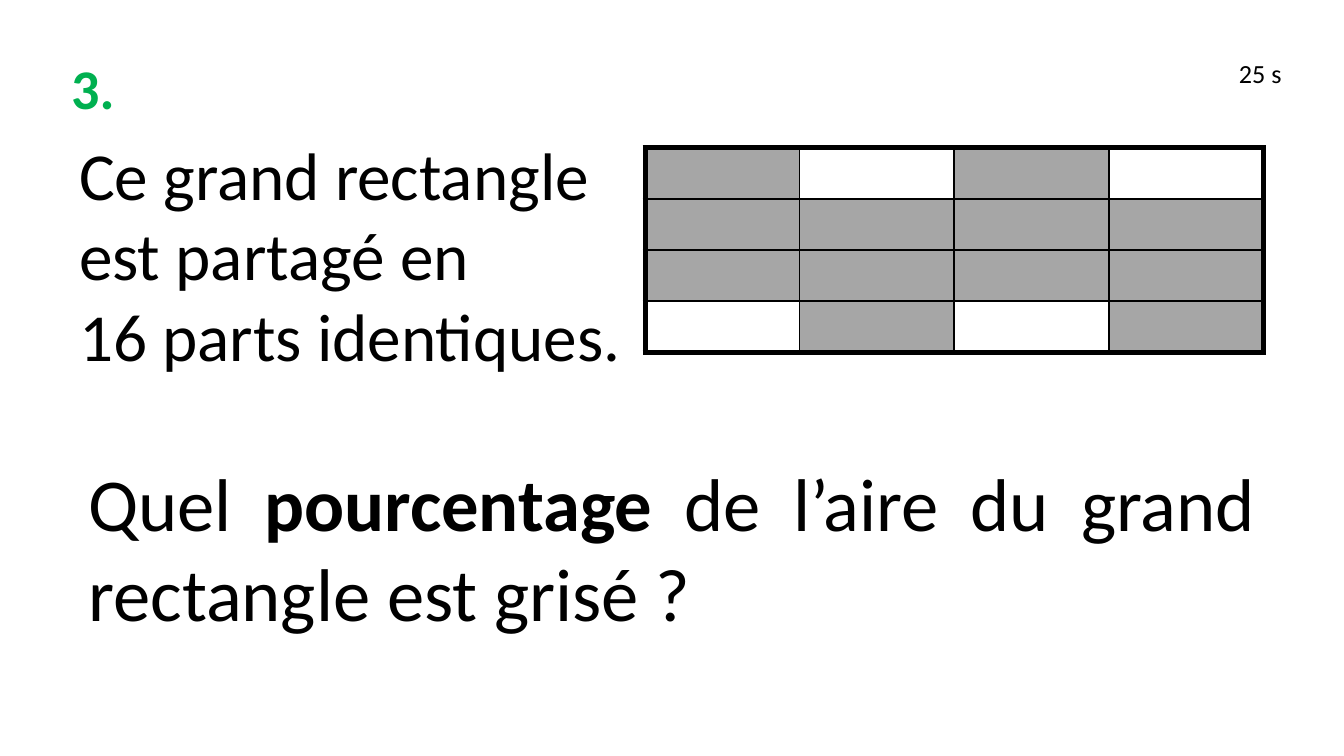
from lxml.etree import SubElement
from pptx import Presentation
from pptx.dml.color import RGBColor
from pptx.enum.text import MSO_ANCHOR, MSO_AUTO_SIZE, PP_ALIGN
from pptx.oxml.ns import qn
from pptx.util import Inches, Pt

BLACK = RGBColor(0x00, 0x00, 0x00)
GREEN = RGBColor(0x00, 0xB0, 0x50)
GRAY = RGBColor(0xA6, 0xA6, 0xA6)
FONT = "Calibri"

NUMBER = [[("3.", True)]]
DURATION = [[("25 s", False)]]
STATEMENT = [
    [("Ce grand rectangle", False)],
    [("est partagé en", False)],
    [("16 parts identiques.", False)],
]
QUESTION = [[
    ("Quel ", False),
    ("pourcentage", True),
    (" de l’aire du grand rectangle est grisé ?", False),
]]
SHADED = [
    (True, False, True, False),
    (True, True, True, True),
    (True, True, True, True),
    (False, True, False, True),
]
GRID_LEFT, GRID_TOP = 4.8, 1.1
COLUMN_WIDTH, ROW_HEIGHT = 1.15, 0.38
THIN, THICK = 1, 3


def write_text(shape, paragraphs, size, color=BLACK, align=PP_ALIGN.LEFT, wrap=True):
    frame = shape.text_frame
    frame.word_wrap = wrap
    frame.auto_size = MSO_AUTO_SIZE.NONE
    frame.vertical_anchor = MSO_ANCHOR.TOP
    for index, runs in enumerate(paragraphs):
        paragraph = frame.add_paragraph() if index else frame.paragraphs[0]
        paragraph.alignment = align
        for text, bold in runs:
            run = paragraph.add_run()
            run.text = text
            run.font.name = FONT
            run.font.size = Pt(size)
            run.font.bold = bold
            run.font.color.rgb = color


def add_text(slide, box, paragraphs, size, **text_format):
    shape = slide.shapes.add_textbox(*map(Inches, box))
    write_text(shape, paragraphs, size, **text_format)


def set_borders(cell, widths):
    properties = cell._tc.get_or_add_tcPr()
    for side, width in widths.items():
        line = SubElement(properties, qn(f"a:ln{side}"), w=str(Pt(width)))
        fill = SubElement(line, qn("a:solidFill"))
        SubElement(fill, qn("a:srgbClr"), val=str(BLACK))


def add_grid(slide):
    row_count, column_count = len(SHADED), len(SHADED[0])
    table = slide.shapes.add_table(
        row_count, column_count, Inches(GRID_LEFT), Inches(GRID_TOP),
        Inches(column_count * COLUMN_WIDTH), Inches(row_count * ROW_HEIGHT),
    ).table
    table.first_row = False
    table.horz_banding = False
    for row, flags in enumerate(SHADED):
        for column, shaded in enumerate(flags):
            cell = table.cell(row, column)
            cell.margin_top = cell.margin_bottom = 0
            set_borders(cell, {
                "L": THICK if column == 0 else THIN,
                "R": THICK if column == column_count - 1 else THIN,
                "T": THICK if row == 0 else THIN,
                "B": THICK if row == row_count - 1 else THIN,
            })
            if shaded:
                cell.fill.solid()
                cell.fill.fore_color.rgb = GRAY
            else:
                cell.fill.background()


def main():
    presentation = Presentation()
    presentation.slide_width = Inches(10)
    presentation.slide_height = presentation.slide_width * 9 // 16
    slide = presentation.slides.add_slide(presentation.slide_layouts[5])

    title = slide.shapes.title
    title.left, title.top, title.width, title.height = map(Inches, (0.43, 0.35, 0.93, 0.6))
    write_text(title, NUMBER, 30, color=GREEN, wrap=False)

    add_text(slide, (9.12, 0.38, 0.58, 0.27), DURATION, 14)
    add_grid(slide)
    add_text(slide, (0.56, 3.35, 8.88, 1.45), QUESTION, 40, align=PP_ALIGN.JUSTIFY)
    add_text(slide, (0.49, 0.94, 4.24, 1.92), STATEMENT, 36, align=PP_ALIGN.JUSTIFY)
    presentation.save("out.pptx")


if __name__ == "__main__":
    main()
